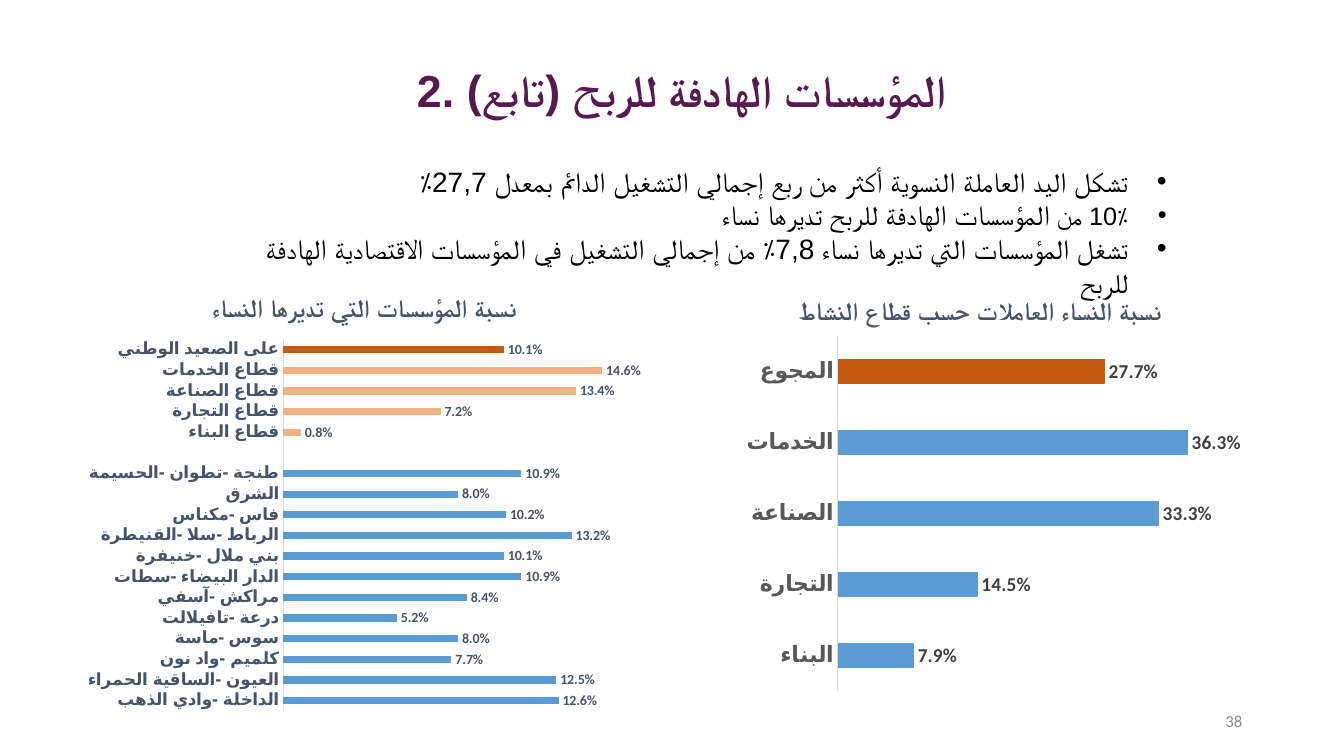
from lxml import etree
from pptx import Presentation
from pptx.chart.data import CategoryChartData
from pptx.dml.color import RGBColor
from pptx.enum.chart import XL_CHART_TYPE, XL_LABEL_POSITION, XL_TICK_MARK
from pptx.enum.text import MSO_ANCHOR, MSO_AUTO_SIZE, PP_ALIGN
from pptx.oxml.ns import qn
from pptx.util import Emu, Pt

BARS = XL_CHART_TYPE.BAR_CLUSTERED
OUTSIDE = XL_LABEL_POSITION.OUTSIDE_END
NO_TICKS = XL_TICK_MARK.NONE
TOP, MIDDLE = MSO_ANCHOR.TOP, MSO_ANCHOR.MIDDLE
FIXED = MSO_AUTO_SIZE.NONE
CENTER, RIGHT = PP_ALIGN.CENTER, PP_ALIGN.RIGHT

EMU_PER_PX = 9144  # 100 px to the inch
PLUM, BLACK, GREY, SLATE = "581850", "000000", "8C8C8C", "44546A"
BLUE, ORANGE, PEACH = "5B9BD5", "C55A11", "F4B183"

BULLETS = [
    [("تشكل اليد العاملة النسوية أكثر من ربع إجمالي التشغيل الدائم بمعدل 27,7٪", 20, "Calibri")],
    [("10٪ من ", 18, "Vollkorn"), ("المؤسسات الهادفة للربح تديرها نساء", 20, "Calibri")],
    [("تشغل المؤسسات التي تديرها نساء 7,8٪ من إجمالي التشغيل في المؤسسات الاقتصادية الهادفة للربح",
      20, "Calibri")],
]
WOMEN_LED = [
    ("الداخلة -وادي الذهب", 0.126), ("العيون -الساقية الحمراء", 0.125),
    ("كلميم -واد نون", 0.077), ("سوس -ماسة", 0.08), ("درعة -تافيلالت", 0.052),
    ("مراكش -آسفي", 0.084), ("الدار البيضاء -سطات", 0.109), ("بني ملال -خنيفرة", 0.101),
    ("الرباط -سلا -القنيطرة", 0.132), ("فاس -مكناس", 0.102), ("الشرق", 0.08),
    ("طنجة -تطوان -الحسيمة", 0.109), ("", None), ("قطاع البناء", 0.008),
    ("قطاع التجارة", 0.072), ("قطاع الصناعة", 0.134), ("قطاع الخدمات", 0.146),
    ("على الصعيد الوطني", 0.101),
]
WOMEN_WORKERS = [("البناء", 0.079), ("التجارة", 0.145), ("الصناعة", 0.333),
                 ("الخدمات", 0.363), ("المجوع", 0.277)]


def px(length):
    return Emu(length * EMU_PER_PX)


def rgb(color):
    return RGBColor.from_string(color)


class SlideBuilder:
    complex_font = "Arial"

    def __init__(self, slide):
        self.slide = slide

    def style(self, font, size, color, bold=False, name="Calibri"):
        font.name, font.size, font.bold = name, Pt(size), bold
        font.color.rgb = rgb(color)

    def style_run(self, run, size, color, bold=False, name="Calibri"):
        """Format a run, with a typeface for its Arabic script too."""
        self.style(run.font, size, color, bold, name)
        latin = run.font._element.find(qn("a:latin"))
        script = etree.Element(qn("a:cs"), typeface=self.complex_font)
        latin.addnext(script)

    def place(self, shape, box, anchor):
        shape.left, shape.top, shape.width, shape.height = map(px, box)
        frame = shape.text_frame
        frame.word_wrap, frame.auto_size = True, FIXED
        frame.vertical_anchor = anchor
        return frame

    def line(self, frame, text, size, color, align, bold=False, name="Calibri"):
        frame.text = text
        paragraph = frame.paragraphs[0]
        paragraph.alignment = align
        self.style_run(paragraph.runs[0], size, color, bold, name)

    def title(self, text, box):
        frame = self.place(self.slide.shapes.title, box, MIDDLE)
        self.line(frame, text, 32, PLUM, CENTER, True, "Arial")

    def label(self, text, box, size, color, align, bold=False, anchor=TOP):
        shape = self.slide.shapes.add_textbox(0, 0, 0, 0)
        self.line(self.place(shape, box, anchor), text, size, color, align, bold)

    def bullets(self, items, box):
        frame = self.place(self.slide.placeholders[1], box, TOP)
        for number, pieces in enumerate(items):
            paragraph = frame.add_paragraph() if number else frame.paragraphs[0]
            paragraph.alignment = RIGHT
            paragraph.space_before = paragraph.space_after = Pt(0)
            paragraph.line_spacing = 1.0
            props = paragraph._p.get_or_add_pPr()
            for key, value in (("rtl", "1"), ("marL", px(38)), ("indent", px(-38))):
                props.set(key, str(value))
            etree.SubElement(props, qn("a:buFont"), typeface="Arial")
            etree.SubElement(props, qn("a:buChar"), char="•")
            for text, size, name in pieces:
                run = paragraph.add_run()
                run.text = text
                self.style_run(run, size, BLACK, name=name)

    def bar_chart(self, rows, box, top_value, axis_text, value_text, highlights):
        """Draw bars; axis_text and value_text are (size, colour), highlights map bar to colour."""
        data = CategoryChartData(number_format="0.0%")
        data.categories = [name for name, _ in rows]
        data.add_series("Series 1", [share for _, share in rows])
        chart = self.slide.shapes.add_chart(BARS, *map(px, box), data).chart
        chart.has_legend = chart.has_title = False
        self.style(chart.font, 10, BLACK)

        values = chart.value_axis
        values.visible = values.has_major_gridlines = False
        values.minimum_scale, values.maximum_scale = 0, top_value
        sectors = chart.category_axis
        sectors.major_tick_mark = sectors.minor_tick_mark = NO_TICKS
        sectors.format.line.color.rgb = rgb("D9D9D9")
        sectors.format.line.width = Pt(0.75)
        self.style(sectors.tick_labels.font, *axis_text, True)

        plot = chart.plots[0]
        plot.gap_width, plot.vary_by_categories = 182, False
        bars = plot.series[0]
        bars.format.fill.solid()
        bars.format.fill.fore_color.rgb = rgb(BLUE)
        for index, color in highlights.items():
            fill = bars.points[index].format.fill
            fill.solid()
            fill.fore_color.rgb = rgb(color)
        labels = bars.data_labels
        labels.show_value, labels.position = True, OUTSIDE
        labels.number_format, labels.number_format_is_linked = "0.0%", False
        self.style(labels.font, *value_text, True)


def main():
    deck = Presentation()
    deck.slide_width, deck.slide_height = px(1333), px(750)
    page = SlideBuilder(deck.slides.add_slide(deck.slide_layouts[1]))

    page.title("2. المؤسسات الهادفة للربح (تابع)", (298, 57, 756, 64))
    page.bullets(BULLETS, (223, 158, 944, 111))

    sector_colors = dict.fromkeys(range(13, 17), PEACH)
    page.bar_chart(WOMEN_LED, (76, 329, 563, 384), 0.16, (12, SLATE), (10, SLATE),
                   {**sector_colors, 17: ORANGE})
    page.label("نسبة المؤسسات التي تديرها النساء", (28, 285, 667, 40), 18, SLATE, CENTER, True)

    page.bar_chart(WOMEN_WORKERS, (731, 326, 500, 367), 0.4, (16, "595959"), (14, "404040"),
                   {4: ORANGE})
    page.label("نسبة النساء العاملات حسب قطاع النشاط", (639, 288, 667, 40), 18, SLATE, CENTER, True)

    page.label("38", (942, 695, 300, 40), 12, GREY, RIGHT, anchor=MIDDLE)
    deck.save("out.pptx")


if __name__ == "__main__":
    main()
